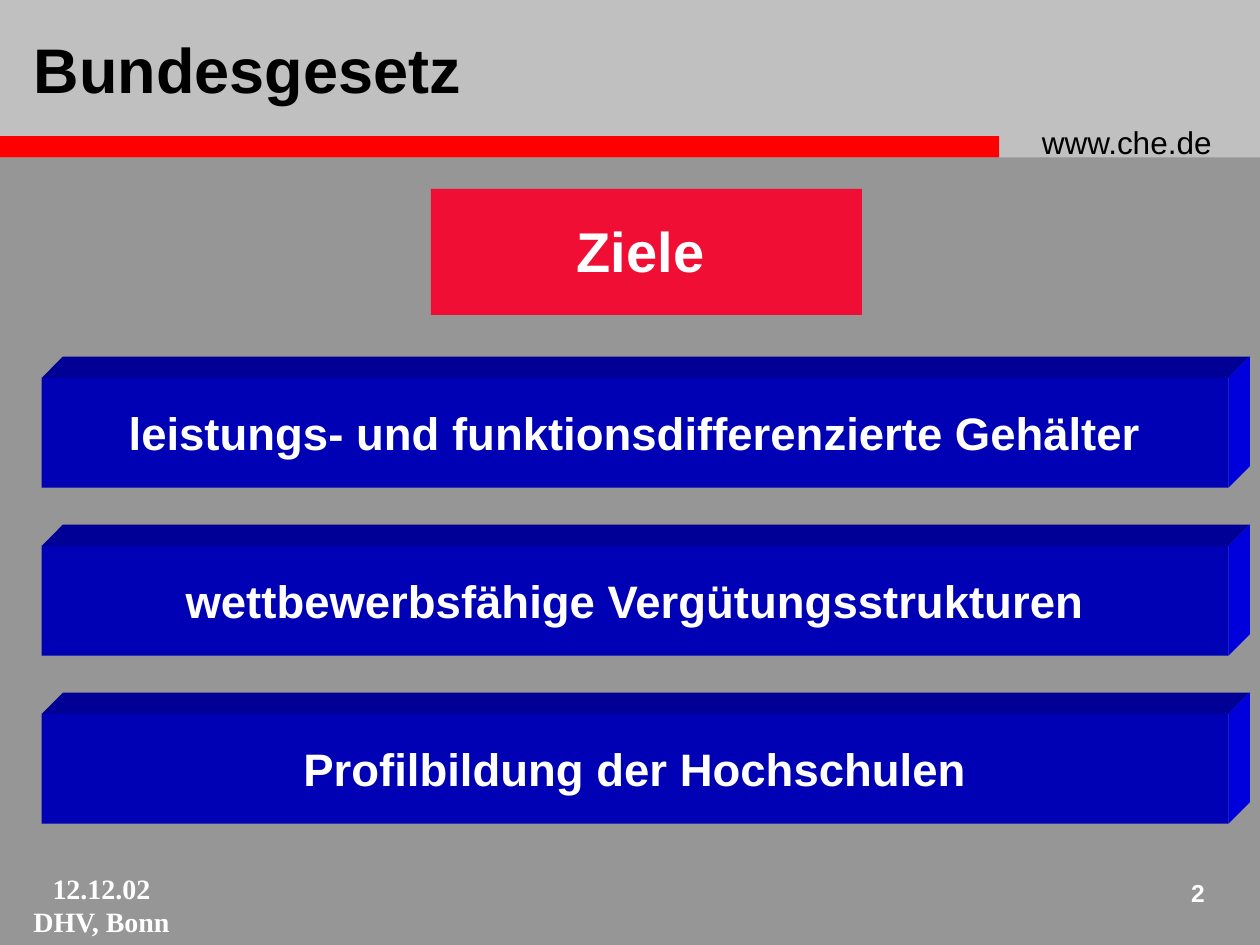
from typing import NamedTuple

from pptx import Presentation
from pptx.dml.color import RGBColor
from pptx.enum.shapes import MSO_SHAPE
from pptx.enum.text import MSO_ANCHOR, PP_ALIGN
from pptx.util import Inches, Pt

HUES = {
    "ground": "969696", "head": "C0C0C0", "stripe": "FF0000", "goal": "F00E34",
    "front": "0000B4", "top": "000096", "side": "0000DC",
    "black": "000000", "white": "FFFFFF",
}
LEFT, WIDE, HIGH, DEPTH = 0.33, 9.42, 0.87, 0.17
FIRST, STEP = 3, 4 / 3
GOALS = [
    "leistungs- und funktionsdifferenzierte Gehälter",
    "wettbewerbsfähige Vergütungsstrukturen",
    "Profilbildung der Hochschulen",
]


class Box(NamedTuple):
    left: float
    top: float
    wide: float
    high: float


class Style(NamedTuple):
    size: int
    hue: str = "white"
    bold: bool = True
    face: str = "Arial"
    align: PP_ALIGN = PP_ALIGN.CENTER
    anchor: MSO_ANCHOR = MSO_ANCHOR.MIDDLE
    wrap: bool = False


class Label(NamedTuple):
    box: Box
    lines: list[str]
    style: Style


LABELS = [
    Label(Box(8.17, 0.93, 1.75, 0.4), ["www.che.de"],
          Style(18, "black", False, align=PP_ALIGN.LEFT, anchor=MSO_ANCHOR.TOP, wrap=True)),
    Label(Box(0.15, 6.86, 1.31, 0.64), ["12.12.02", "DHV, Bonn"],
          Style(16, face="Times New Roman")),
    Label(Box(9.08, 6.92, 0.58, 0.42), ["2"],
          Style(14, align=PP_ALIGN.RIGHT, anchor=MSO_ANCHOR.TOP, wrap=True)),
    Label(Box(0.17, 0, 8.08, 1.08), ["Bundesgesetz"],
          Style(36, "black", align=PP_ALIGN.LEFT, wrap=True)),
]


def color(name: str) -> RGBColor:
    """Return the named colour."""
    return RGBColor.from_string(HUES[name])


def paint(shape, hue: str) -> None:
    """Give a shape a flat fill without line or shadow."""
    shape.shadow.inherit = False
    shape.fill.solid()
    shape.fill.fore_color.rgb = color(hue)
    shape.line.fill.background()


def block(slide, box: Box, hue: str):
    """Draw a flat rectangle."""
    shape = slide.shapes.add_shape(MSO_SHAPE.RECTANGLE, *map(Inches, box))
    paint(shape, hue)
    return shape


def facet(slide, points: list[tuple[float, float]], hue: str) -> None:
    """Draw a flat polygon."""
    start, *rest = [(Inches(x), Inches(y)) for x, y in points]
    pen = slide.shapes.build_freeform(*start)
    pen.add_line_segments(rest, close=True)
    paint(pen.convert_to_shape(), hue)


def write(shape, lines: list[str], style: Style) -> None:
    """Write lines of text into a shape."""
    frame = shape.text_frame
    frame.word_wrap = style.wrap
    frame.vertical_anchor = style.anchor
    for index, line in enumerate(lines):
        para = frame.add_paragraph() if index else frame.paragraphs[0]
        para.alignment = style.align
        run = para.add_run()
        run.text = line
        font = run.font
        font.name, font.size, font.bold = style.face, Pt(style.size), style.bold
        font.color.rgb = color(style.hue)


def slab(slide, top: float, text: str) -> None:
    """Draw a raised bar with its text."""
    right, base = LEFT + WIDE, top + HIGH
    back, edge = top - DEPTH, right + DEPTH
    facet(slide, [(LEFT, top), (LEFT + DEPTH, back), (edge, back), (right, top)], "top")
    facet(slide, [(right, top), (edge, back), (edge, base - DEPTH), (right, base)], "side")
    front = block(slide, Box(LEFT, top, WIDE, HIGH), "front")
    write(front, [text], Style(26))


def main() -> None:
    """Build and save the slide."""
    deck = Presentation()
    deck.slide_width, deck.slide_height = Inches(10), Inches(7.5)
    slide = deck.slides.add_slide(deck.slide_layouts[6])
    ground = slide.background.fill
    ground.solid()
    ground.fore_color.rgb = color("ground")
    block(slide, Box(0, 0, 10, 1.25), "head")
    block(slide, Box(0, 1.08, 7.93, 0.17), "stripe")
    for label in LABELS:
        shape = slide.shapes.add_textbox(*map(Inches, label.box))
        write(shape, label.lines, label.style)
    for index, goal in enumerate(GOALS):
        slab(slide, FIRST + index * STEP, goal)
    block(slide, Box(3.42, 1.5, 3.42, 1), "goal")
    write(block(slide, Box(4.48, 1.67, 1.21, 0.63), "goal"), ["Ziele"], Style(32))
    deck.save("out.pptx")


if __name__ == "__main__":
    main()
